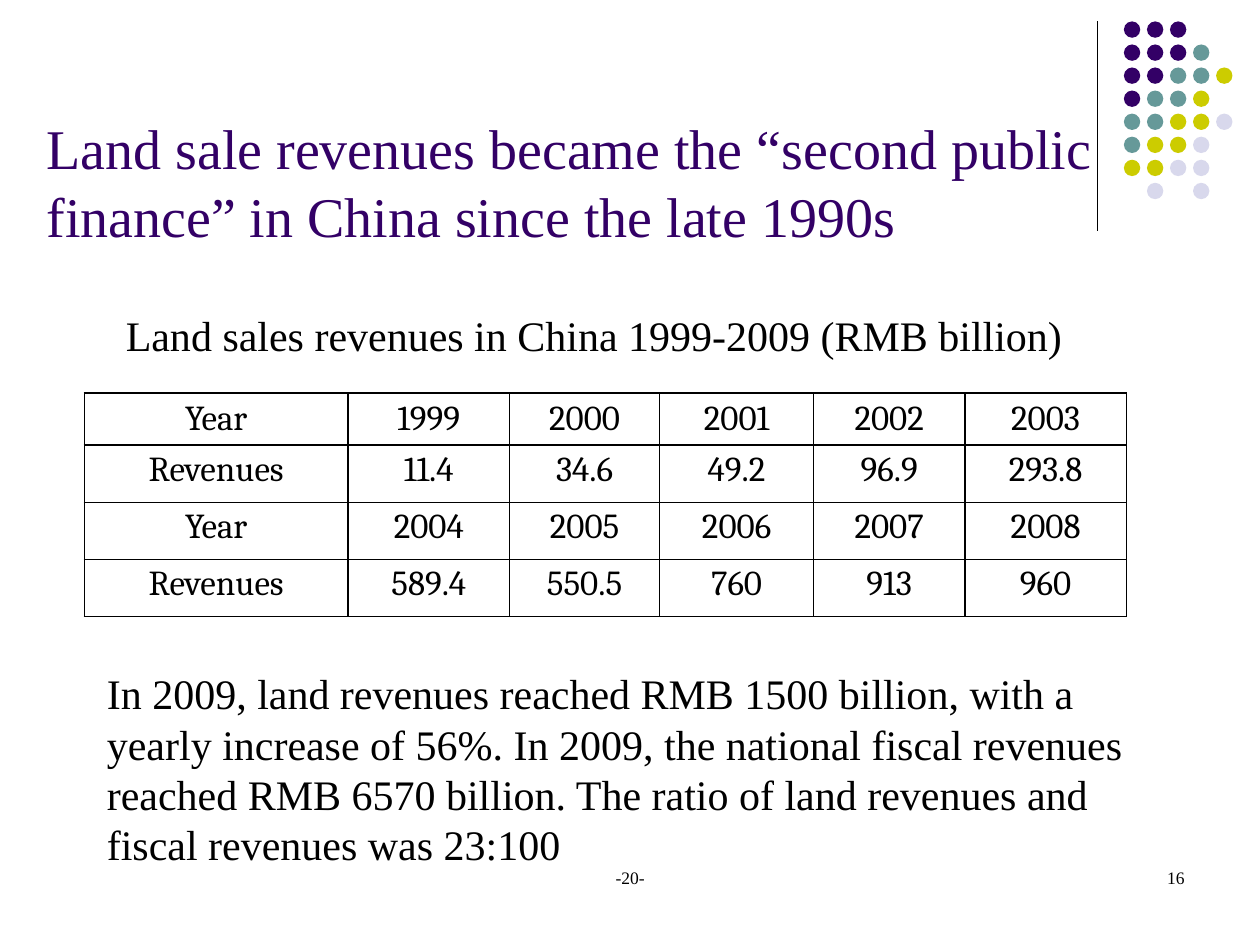
from lxml import etree
from pptx import Presentation, util as u
from pptx.dml.color import RGBColor
from pptx.enum import shapes, text
from pptx.oxml import ns

BLACK = RGBColor(0x00, 0x00, 0x00)
PURPLE = RGBColor(0x33, 0x00, 0x66)
TEAL = RGBColor(0x66, 0x99, 0x99)
OLIVE = RGBColor(0xCC, 0xCC, 0x00)
LAVENDER = RGBColor(0xD8, 0xD8, 0xEC)

GRID_COLUMNS, GRID_ROWS = 100, 75
SLIDE_WIDTH, SLIDE_HEIGHT = u.Inches(10), u.Inches(7.5)
LINE_SPACING = 1.2

DOT_COLOURS = {"P": PURPLE, "T": TEAL, "O": OLIVE, "L": LAVENDER}
DOT_ROWS = ["PPP", "PPPT", "PPTTO", "PTTO", "TTOOL", "TOOL", "OOLL", " L L"]
DOT_PITCH, DOT_SIZE = 1.83, 1.3

REVENUE_ROWS = [
    ["Year", "1999", "2000", "2001", "2002", "2003"],
    ["Revenues", "11.4", "34.6", "49.2", "96.9", "293.8"],
    ["Year", "2004", "2005", "2006", "2007", "2008"],
    ["Revenues", "589.4", "550.5", "760", "913", "960"],
]
COLUMN_SPANS = [20.9, 12.8, 11.9, 12.2, 12, 12.8]
ROW_SPANS = [4.1, 4.53, 4.53, 4.53]

TITLE = {"size": u.Pt(32), "name": "Times New Roman", "color": PURPLE}
BODY = {"size": u.Pt(24), "name": "Times New Roman", "color": BLACK}
FOOTER = {"size": u.Pt(10), "name": "Times New Roman", "color": BLACK}
TABLE = {"size": u.Pt(20), "name": "Cambria", "color": BLACK}


def columns(count):
    return round(SLIDE_WIDTH * count / GRID_COLUMNS)


def rows(count):
    return round(SLIDE_HEIGHT * count / GRID_ROWS)


def place(box):
    left, top, width, height = box
    return columns(left), rows(top), columns(width), rows(height)


def set_font(font, formats):
    for name, value in formats.items():
        if name == "color":
            font.color.rgb = value
        else:
            setattr(font, name, value)


def add_text(slide, box, wording, formats, align=text.PP_ALIGN.LEFT,
             anchor=text.MSO_ANCHOR.TOP):
    frame = slide.shapes.add_textbox(*place(box)).text_frame
    frame.word_wrap = True
    frame.vertical_anchor = anchor
    paragraph = frame.paragraphs[0]
    paragraph.alignment = align
    paragraph.line_spacing = u.Pt(formats["size"].pt * LINE_SPACING)
    run = paragraph.add_run()
    run.text = wording
    set_font(run.font, formats)


def add_divider(slide, box):
    left, top, width, height = place(box)
    divider = slide.shapes.add_connector(
        shapes.MSO_CONNECTOR.STRAIGHT, left, top, left + width, top + height)
    divider.line.color.rgb = BLACK
    divider.line.width = u.Pt(0.75)
    etree.SubElement(divider._element.spPr, ns.qn("a:effectLst"))


def add_dots(slide, box):
    left, top = box[:2]
    group = slide.shapes.add_group_shape()
    for row, pattern in enumerate(DOT_ROWS):
        for column, key in enumerate(pattern):
            if key == " ":
                continue
            dot = group.shapes.add_shape(
                shapes.MSO_SHAPE.OVAL,
                *place((left + column * DOT_PITCH, top + row * DOT_PITCH,
                        DOT_SIZE, DOT_SIZE)))
            dot.shadow.inherit = False
            dot.fill.solid()
            dot.fill.fore_color.rgb = DOT_COLOURS[key]
            dot.line.fill.background()


def set_borders(cell):
    properties = cell._tc.get_or_add_tcPr()
    for index, side in enumerate(("lnL", "lnR", "lnT", "lnB")):
        border = etree.Element(ns.qn(f"a:{side}"), w=str(u.Pt(1)))
        fill = etree.SubElement(border, ns.qn("a:solidFill"))
        etree.SubElement(fill, ns.qn("a:srgbClr"), val=str(BLACK))
        properties.insert(index, border)


def fill_cell(cell, wording, anchor):
    cell.fill.background()
    set_borders(cell)
    for side in ("left", "right", "top", "bottom"):
        setattr(cell, f"margin_{side}", u.Inches(0.04))
    cell.vertical_anchor = anchor
    paragraph = cell.text_frame.paragraphs[0]
    paragraph.alignment = text.PP_ALIGN.CENTER
    run = paragraph.add_run()
    run.text = wording
    set_font(run.font, TABLE)


def add_revenue_table(slide, box):
    table = slide.shapes.add_table(
        len(ROW_SPANS), len(COLUMN_SPANS), *place(box)).table
    table.first_row = table.horz_banding = False
    for column, span in zip(table.columns, COLUMN_SPANS):
        column.width = columns(box[2] * span / sum(COLUMN_SPANS))
    for row, span in zip(table.rows, ROW_SPANS):
        row.height = rows(box[3] * span / sum(ROW_SPANS))
    for row, values in enumerate(REVENUE_ROWS):
        anchor = text.MSO_ANCHOR.TOP if row else text.MSO_ANCHOR.MIDDLE
        for column, value in enumerate(values):
            fill_cell(table.cell(row, column), value, anchor)


def add_footer(slide, box):
    left, top, width, height = box
    add_text(slide, (left, top, width * 0.52, height), "-20-", FOOTER,
             text.PP_ALIGN.CENTER)
    add_text(slide, (left + width * 0.62, top, width * 0.38, height), "16",
             FOOTER, text.PP_ALIGN.RIGHT)


def build_revenue_slide(presentation):
    slide = presentation.slides.add_slide(presentation.slide_layouts[6])
    add_divider(slide, (87.1, 1.7, 0, 16.6))
    add_dots(slide, (89.2, 1.7, 8.6, 14.1))
    add_footer(slide, (34.2, 68.3, 60.8, 5))
    add_text(slide, (2.7, 6, 87, 14.2),
             "Land sale revenues became the “second public finance” "
             "in China since the late 1990s",
             TITLE, anchor=text.MSO_ANCHOR.BOTTOM)
    add_revenue_table(slide, (6.7, 31.2, 82.7, 17.7))
    add_text(slide, (9, 24.1, 84.3, 5),
             "Land sales revenues in China 1999-2009 (RMB billion)", BODY)
    add_text(slide, (7.5, 52.5, 86.6, 17),
             "In 2009, land revenues reached RMB 1500 billion, with a yearly "
             "increase of 56%. In 2009, the national fiscal revenues reached "
             "RMB 6570 billion. The ratio of land revenues and fiscal "
             "revenues was 23:100", BODY)


def main():
    presentation = Presentation()
    presentation.slide_width = SLIDE_WIDTH
    presentation.slide_height = SLIDE_HEIGHT
    build_revenue_slide(presentation)
    presentation.save("out.pptx")


if __name__ == "__main__":
    main()
